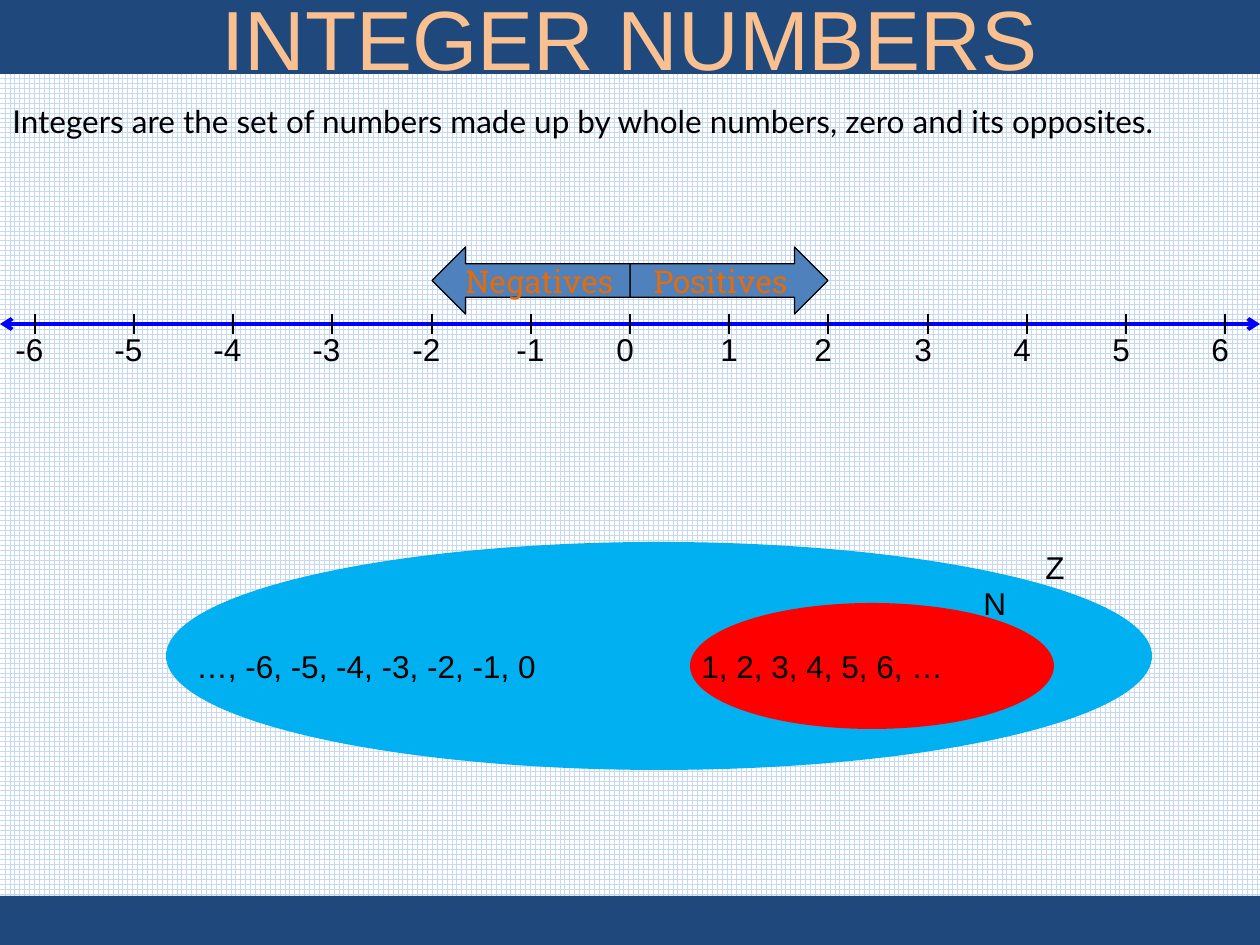
from typing import NamedTuple

from lxml import etree
from pptx import Presentation
from pptx.dml.color import RGBColor
from pptx.enum import dml, shapes, text
from pptx.oxml import ns
from pptx import util as u

PX = 914400 / 126
WIDTH, HEIGHT = 1260, 945
AXIS_Y, ZERO_X, UNIT, TICK = 324, 630, 99.2, 10

NAVY = RGBColor(0x1F, 0x49, 0x7D)
PEACH = RGBColor(0xFA, 0xC0, 0x90)
PALE_BLUE = RGBColor(0xC6, 0xD9, 0xF1)
WHITE = RGBColor(0xFF, 0xFF, 0xFF)
BLACK = RGBColor(0, 0, 0)
BLUE = RGBColor(0, 0, 0xFF)
STEEL = RGBColor(0x4F, 0x81, 0xBD)
ORANGE = RGBColor(0xE4, 0x6C, 0x0A)
SKY = RGBColor(0, 0xB0, 0xF0)
RED = RGBColor(0xFF, 0, 0)


class Box(NamedTuple):
    x: int
    y: int
    w: int
    h: int


class Figure(NamedTuple):
    kind: shapes.MSO_SHAPE
    box: Box
    fill: RGBColor
    label: str = ""


class Label(NamedTuple):
    words: str
    box: Box


FIGURES = [
    Figure(shapes.MSO_SHAPE.RECTANGLE, Box(0, 896, WIDTH, 49), NAVY),
    Figure(shapes.MSO_SHAPE.RIGHT_ARROW, Box(630, 247, 198, 67), STEEL, "Positives"),
    Figure(shapes.MSO_SHAPE.OVAL, Box(166, 542, 986, 228), SKY),
    Figure(shapes.MSO_SHAPE.LEFT_ARROW, Box(432, 247, 198, 67), STEEL, "Negatives"),
    Figure(shapes.MSO_SHAPE.OVAL, Box(690, 603, 364, 126), RED),
]
SET_LABELS = [
    Label("1, 2, 3, 4, 5, 6, …", Box(689, 641, 368, 50)),
    Label("N", Box(971, 578, 55, 50)),
    Label("…, -6, -5, -4, -3, -2, -1, 0", Box(184, 641, 494, 50)),
    Label("Z", Box(1033, 542, 50, 50)),
]


def emu(px: int) -> u.Emu:
    return u.Emu(round(px * PX))


def place(box: Box) -> list[u.Emu]:
    return [emu(v) for v in box]


def write(sp, words: str, *, size=18, font="Arial", color=BLACK,
          align=text.PP_ALIGN.LEFT, anchor=text.MSO_ANCHOR.TOP,
          wrap=True, fit=text.MSO_AUTO_SIZE.NONE) -> None:
    tf = sp.text_frame
    tf.word_wrap = wrap
    tf.auto_size = fit
    tf.vertical_anchor = anchor
    p = tf.paragraphs[0]
    p.alignment = align
    r = p.add_run()
    r.text = words
    r.font.size = u.Pt(size)
    r.font.name = font
    r.font.color.rgb = color


def add_label(parent, label: Label) -> None:
    sp = parent.add_textbox(*place(label.box))
    write(sp, label.words, wrap=False, fit=text.MSO_AUTO_SIZE.SHAPE_TO_FIT_TEXT)


def add_figure(parent, figure: Figure) -> None:
    sp = parent.add_shape(figure.kind, *place(figure.box))
    sp.shadow.inherit = False
    sp.fill.solid()
    sp.fill.fore_color.rgb = figure.fill
    if figure.label:
        sp.line.color.rgb = BLACK
        sp.line.width = u.Pt(0.75)
        write(sp, figure.label, font="Roboto Slab", color=ORANGE,
              align=text.PP_ALIGN.CENTER, anchor=text.MSO_ANCHOR.MIDDLE)
    else:
        sp.line.fill.background()


def add_line(parent, x1: int, y1: int, x2: int, y2: int, color: RGBColor,
             width: float, arrows: bool = False) -> None:
    sp = parent.add_connector(shapes.MSO_CONNECTOR.STRAIGHT,
                              emu(x1), emu(y1), emu(x2), emu(y2))
    sp.line.color.rgb = color
    sp.line.width = u.Pt(width)
    if arrows:
        ln = sp.line._get_or_add_ln()
        for end in ("a:headEnd", "a:tailEnd"):
            etree.SubElement(ln, ns.qn(end), type="arrow")
    etree.SubElement(sp._element.spPr, ns.qn("a:effectLst"))


def add_number_line(parent) -> None:
    group = parent.add_group_shape().shapes
    add_line(group, 0, AXIS_Y, WIDTH, AXIS_Y, BLUE, 2.25, arrows=True)
    for n in range(-6, 7):
        x = ZERO_X + round(n * UNIT)
        add_line(group, x, AXIS_Y - TICK, x, AXIS_Y + TICK, BLACK, 0.75)
        w = (42 if abs(n) == 1 else 52) + (12 if n < 0 else 0)
        add_label(group, Label(str(n), Box(x - w // 2, AXIS_Y, w, 50)))


def add_title(s) -> None:
    sp = s.shapes.title
    sp.left, sp.top, sp.width, sp.height = place(Box(0, 0, WIDTH, 74))
    sp.fill.solid()
    sp.fill.fore_color.rgb = NAVY
    write(sp, "INTEGER NUMBERS", size=48, color=PEACH,
          align=text.PP_ALIGN.CENTER, anchor=text.MSO_ANCHOR.MIDDLE)


def main() -> None:
    prs = Presentation()
    prs.slide_width, prs.slide_height = emu(WIDTH), emu(HEIGHT)
    s = prs.slides.add_slide(prs.slide_layouts[5])
    bg = s.background.fill
    bg.patterned()
    bg.pattern = dml.MSO_PATTERN.LARGE_GRID
    bg.fore_color.rgb = PALE_BLUE
    bg.back_color.rgb = WHITE

    add_title(s)
    definition = s.shapes.add_textbox(*place(Box(0, 96, WIDTH, 89)))
    write(definition,
          "Integers are the set of numbers made up by whole numbers, zero and its opposites.",
          font="Lato", align=text.PP_ALIGN.JUSTIFY)
    add_number_line(s.shapes)
    for figure in FIGURES:
        add_figure(s.shapes, figure)
    for label in SET_LABELS:
        add_label(s.shapes, label)
    prs.save("out.pptx")


if __name__ == "__main__":
    main()
